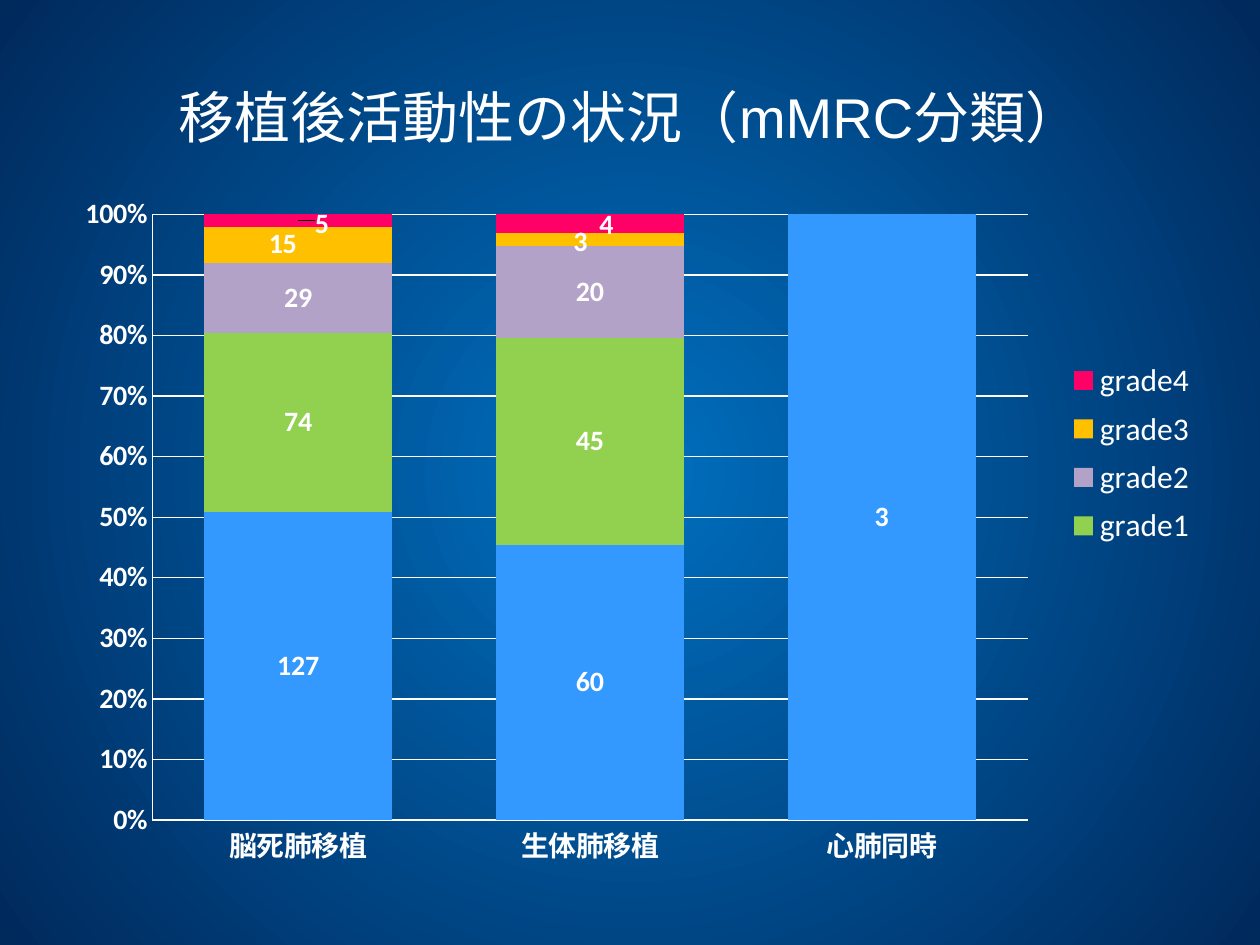
from dataclasses import dataclass
from typing import Optional

import pptx
import pptx.chart.data
import pptx.dml.color
import pptx.enum.chart
import pptx.enum.text
import pptx.oxml
import pptx.oxml.ns
import pptx.util

Pt = pptx.util.Pt
qn = pptx.oxml.ns.qn

COLORS = {
    "white": "FFFFFF", "center": "0070C0", "edge": "00295C",
    "blue": "3399FF", "green": "92D050", "purple": "B3A2C7",
    "amber": "FFC000", "pink": "FF0066",
}
CATEGORIES = ["脳死肺移植", "生体肺移植", "心肺同時"]
BOLD_16 = {"size": Pt(16), "bold": True}


@dataclass
class Grade:
    name: str
    values: tuple[Optional[int], ...]
    color: str
    label_shifts: tuple[tuple[float, float], ...] = ()


GRADES = [
    Grade("grade0", (127, 60, 3), "blue"),
    Grade("grade1", (74, 45, None), "green"),
    Grade("grade2", (29, 20, None), "purple"),
    Grade("grade3", (15, 3, None), "amber", ((-0.013, 0), (-0.008, 0.004))),
    Grade("grade4", (5, 4, None), "pink", ((0.02, 0.005), (0.014, 0.002))),
]


def rgb(name: str) -> pptx.dml.color.RGBColor:
    return pptx.dml.color.RGBColor.from_string(COLORS[name])


def set_all(obj, values: dict) -> None:
    for name, value in values.items():
        setattr(obj, name, value)


def set_font(font, values: dict) -> None:
    set_all(font, values)
    font.color.rgb = rgb("white")


def set_line(fmt) -> None:
    fmt.line.color.rgb = rgb("white")
    fmt.line.width = Pt(0.75)


def set_layout(parent, after: str, settings: dict) -> None:
    """Place a chart part by fractions of the chart size."""
    for old in parent.findall(qn("c:layout")):
        parent.remove(old)
    body = "".join(f'<c:{tag} val="{val}"/>' for tag, val in settings.items())
    layout = pptx.oxml.parse_xml(
        f'<c:layout {pptx.oxml.ns.nsdecls("c")}>'
        f"<c:manualLayout>{body}</c:manualLayout></c:layout>")
    anchor = parent.find(qn(after)) if after else None
    if anchor is None:
        parent.insert(0, layout)
    else:
        anchor.addnext(layout)


def add_background(s) -> None:
    fill = s.background.fill
    fill.gradient()
    for stop, name in zip(fill.gradient_stops, ("center", "edge")):
        stop.color.rgb = rgb(name)
    grad = s._element.find(".//" + qn("a:gradFill"))
    grad.replace(grad.find(qn("a:lin")), pptx.oxml.parse_xml(
        f'<a:path {pptx.oxml.ns.nsdecls("a")} path="circle">'
        '<a:fillToRect l="50000" t="50000" r="50000" b="50000"/></a:path>'))


def add_title(s, text: str) -> None:
    tf = s.shapes.add_textbox(Pt(88), Pt(21.6), Pt(544), Pt(90)).text_frame
    set_all(tf, {"word_wrap": True,
                 "vertical_anchor": pptx.enum.text.MSO_ANCHOR.MIDDLE})
    p = tf.paragraphs[0]
    p.alignment = pptx.enum.text.PP_ALIGN.CENTER
    r = p.add_run()
    r.text = text
    set_font(r.font, {"name": "Arial", "size": Pt(32)})


def format_series(ser, grade: Grade) -> None:
    ser.format.fill.solid()
    ser.format.fill.fore_color.rgb = rgb(grade.color)
    labels = ser.data_labels
    labels.show_value = True
    set_font(labels.font, BOLD_16)
    # Small segments have their labels moved aside
    for i, _ in enumerate(grade.label_shifts):
        set_font(ser.points[i].data_label.font, BOLD_16)
    for lbl, (x, y) in zip(ser._element.iter(qn("c:dLbl")), grade.label_shifts):
        set_layout(lbl, "c:idx", {"x": x, "y": y})


def format_axes(chart) -> None:
    for axis in (chart.category_axis, chart.value_axis):
        set_all(axis, {"major_tick_mark": pptx.enum.chart.XL_TICK_MARK.NONE,
                       "minor_tick_mark": pptx.enum.chart.XL_TICK_MARK.NONE})
        set_font(axis.tick_labels.font, BOLD_16)
        set_line(axis.format)
    axis = chart.value_axis
    axis.has_major_gridlines = True
    set_line(axis.major_gridlines.format)
    set_all(axis.tick_labels, {"number_format": "0%",
                               "number_format_is_linked": False})


def format_legend(chart) -> None:
    chart.has_legend = True
    legend = chart.legend
    set_all(legend, {"position": pptx.enum.chart.XL_LEGEND_POSITION.RIGHT,
                     "include_in_layout": False})
    set_font(legend.font, {"size": Pt(18)})
    # The first series has no legend entry
    pos = legend._element.find(qn("c:legendPos"))
    pos.addnext(pptx.oxml.parse_xml(
        f'<c:legendEntry {pptx.oxml.ns.nsdecls("c")}>'
        '<c:idx val="0"/><c:delete val="1"/></c:legendEntry>'))
    set_layout(legend._element, "c:legendEntry",
               {"xMode": "edge", "yMode": "edge",
                "x": 0.837, "y": 0.25, "w": 0.15, "h": 0.29})


def add_grade_chart(s) -> None:
    data = pptx.chart.data.CategoryChartData()
    data.categories = CATEGORIES
    for grade in GRADES:
        data.add_series(grade.name, grade.values)
    chart = s.shapes.add_chart(
        pptx.enum.chart.XL_CHART_TYPE.COLUMN_STACKED_100,
        Pt(31), Pt(100), Pt(675), Pt(402.5), data).chart
    chart.has_title = False
    set_font(chart.font, {"name": "Calibri", "size": Pt(10)})
    plot = chart.plots[0]
    set_all(plot, {"gap_width": 55, "overlap": 100, "vary_by_categories": False})
    for ser, grade in zip(plot.series, GRADES):
        format_series(ser, grade)
    format_axes(chart)
    format_legend(chart)
    set_layout(chart._chartSpace.find(".//" + qn("c:plotArea")), "",
               {"layoutTarget": "inner", "xMode": "edge", "yMode": "edge",
                "x": 0.083, "y": 0.056, "w": 0.741, "h": 0.86})


def main() -> None:
    prs = pptx.Presentation()
    set_all(prs, {"slide_width": Pt(720), "slide_height": Pt(540)})
    s = prs.slides.add_slide(prs.slide_layouts[6])
    add_background(s)
    add_title(s, "移植後活動性の状況（mMRC分類）")
    add_grade_chart(s)
    prs.save("out.pptx")


if __name__ == "__main__":
    main()
